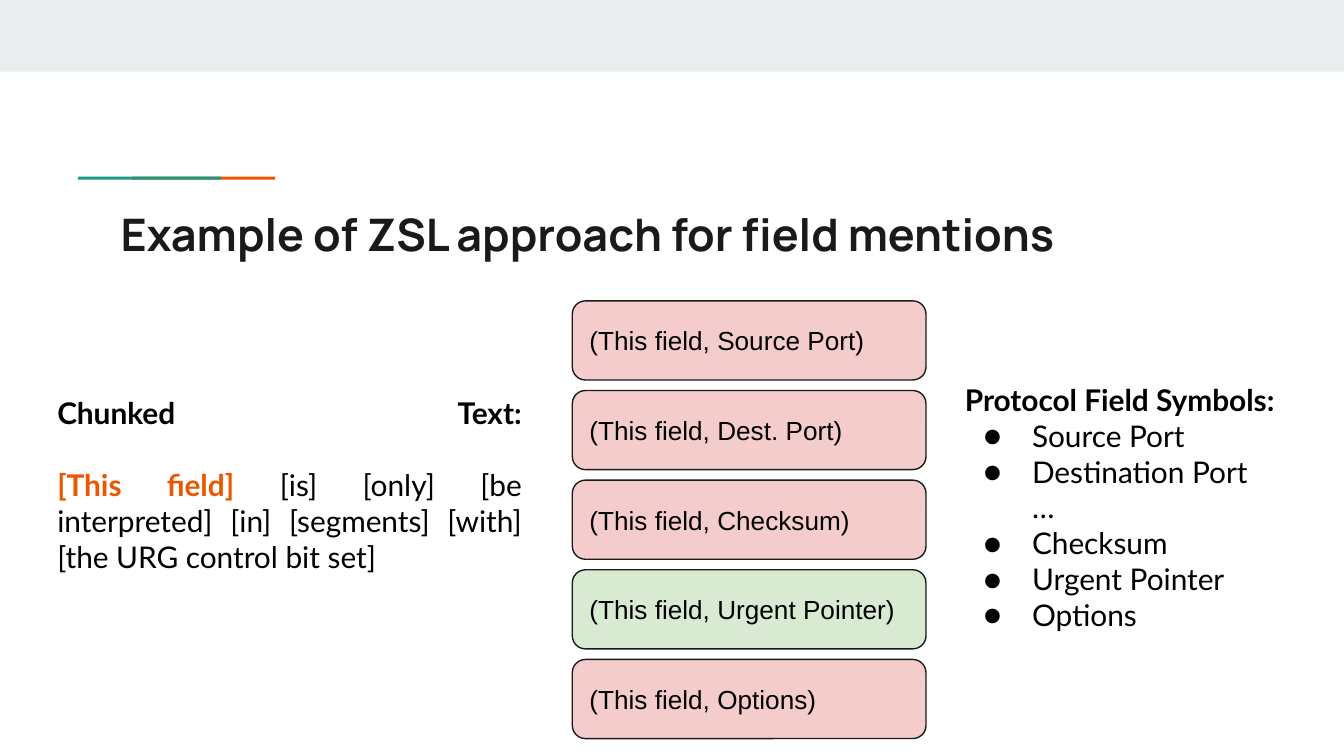
from dataclasses import dataclass

from lxml import etree
from pptx import Presentation
from pptx.dml import color
from pptx.enum import shapes, text
from pptx.oxml import ns
from pptx.util import Pt


@dataclass(frozen=True)
class Theme:
    """Colours, fonts and type sizes of the slide."""
    ink: str = "1A1A1A"
    black: str = "000000"
    band: str = "E9EDEE"
    teal: str = "1A9988"
    orange: str = "EB5600"
    miss: str = "F4CCCC"
    match: str = "D9EAD3"
    title_font: str = "Manrope"
    body_font: str = "Lato"
    pair_font: str = "Arial"
    title_size: float = 24
    body_size: float = 16
    pair_size: float = 14
    inset: float = 7.2


THEME = Theme()


def rgb(value):
    """Turn a hex string into a colour."""
    return color.RGBColor.from_string(value)


def add_run(paragraph, wording, font, size, ink=THEME.black, bold=False):
    """Add one styled run."""
    run = paragraph.add_run()
    run.text = wording
    run.font.name = font
    run.font.size = Pt(size)
    run.font.bold = bold
    run.font.color.rgb = rgb(ink)


def set_frame(frame, anchor=text.MSO_ANCHOR.TOP):
    """Set wrapping, anchor and even insets, and return the frame."""
    frame.word_wrap = True
    frame.vertical_anchor = anchor
    frame.margin_left = frame.margin_right = Pt(THEME.inset)
    frame.margin_top = frame.margin_bottom = Pt(THEME.inset)
    return frame


def add_text_frame(slide, box):
    """Add a text box and return its frame."""
    return set_frame(slide.shapes.add_textbox(*map(Pt, box)).text_frame)


def add_block(slide, kind, box, fill):
    """Add a flat filled shape without an outline."""
    block = slide.shapes.add_shape(kind, *map(Pt, box))
    block.shadow.inherit = False
    block.fill.solid()
    block.fill.fore_color.rgb = rgb(fill)
    block.line.fill.background()
    return block


def add_accent(slide, box):
    """Draw two overlapping bars, teal over orange."""
    left, top, width, height = box
    bar_width = 76.6
    for bar_left, fill in ((left + width - bar_width, THEME.orange), (left, THEME.teal)):
        add_block(slide, shapes.MSO_SHAPE.RECTANGLE, (bar_left, top, bar_width, height), fill)


def add_title(slide, box, wording):
    """Write the slide title."""
    paragraph = add_text_frame(slide, box).paragraphs[0]
    add_run(paragraph, wording, THEME.title_font, THEME.title_size, THEME.ink, True)


def add_chunked_text(slide, box, heading, mention, rest):
    """Write the justified sentence with its highlighted mention."""
    paragraph = add_text_frame(slide, box).paragraphs[0]
    paragraph.alignment = text.PP_ALIGN.JUSTIFY
    style = THEME.body_font, THEME.body_size
    add_run(paragraph, heading, *style, bold=True)
    for _ in range(2):
        paragraph.add_line_break()
        paragraph._p[-1].get_or_add_rPr().set("sz", str(THEME.body_size * 100))
        latin = etree.SubElement(paragraph._p[-1].rPr, ns.qn("a:latin"))
        latin.set("typeface", THEME.body_font)
    add_run(paragraph, mention, *style, ink=THEME.orange, bold=True)
    add_run(paragraph, rest, *style)


def set_indent(paragraph, bulleted):
    """Indent a paragraph and hang a bullet when asked."""
    properties = paragraph._p.get_or_add_pPr()
    properties.set("marL", str(Pt(36)))
    properties.set("indent", str(Pt(-26) if bulleted else 0))
    if bulleted:
        tint = etree.SubElement(properties, ns.qn("a:buClr"))
        etree.SubElement(tint, ns.qn("a:srgbClr")).set("val", THEME.black)
        etree.SubElement(properties, ns.qn("a:buFont")).set("typeface", THEME.body_font)
        etree.SubElement(properties, ns.qn("a:buChar")).set("char", "●")


def add_symbols(slide, box, heading, symbols):
    """Write the heading and the bulleted field symbols."""
    frame = add_text_frame(slide, box)
    style = THEME.body_font, THEME.body_size
    add_run(frame.paragraphs[0], heading, *style, bold=True)
    for symbol in symbols:
        paragraph = frame.add_paragraph()
        set_indent(paragraph, symbol != "…")
        add_run(paragraph, symbol, *style)


def add_pairs(slide, box, fields, matched):
    """Stack one rounded card per candidate pair, with the match in green."""
    left, top, width, height = box
    card_height = 42.4
    pitch = (height - card_height) / (len(fields) - 1)
    for row, field in enumerate(fields):
        fill = THEME.match if field == matched else THEME.miss
        card_box = left, top + row * pitch, width, card_height
        card = add_block(slide, shapes.MSO_SHAPE.ROUNDED_RECTANGLE, card_box, fill)
        card.line.color.rgb = rgb(THEME.ink)
        card.line.width = Pt(0.75)
        paragraph = set_frame(card.text_frame, text.MSO_ANCHOR.MIDDLE).paragraphs[0]
        paragraph.alignment = text.PP_ALIGN.LEFT
        add_run(paragraph, f"(This field, {field})", THEME.pair_font, THEME.pair_size)


def main():
    """Build and save the slide."""
    deck = Presentation()
    deck.slide_width, deck.slide_height = Pt(720), Pt(405)
    slide = deck.slides.add_slide(deck.slide_layouts[6])
    add_block(slide, shapes.MSO_SHAPE.RECTANGLE, (0, 0, 720, 38.4), THEME.band)
    add_accent(slide, (41.8, 94.7, 105.6, 1.6))
    add_title(slide, (57.6, 103.7, 605.5, 42.5), "Example of ZSL approach for field mentions")
    add_chunked_text(
        slide, (23.6, 204.5, 263.2, 67.7), "Chunked Text:", "[This field]",
        " [is] [only] [be interpreted] [in] [segments] [with] [the URG control bit set]")
    add_symbols(
        slide, (509.8, 197.3, 204, 67.7), "Protocol Field Symbols:",
        ("Source Port", "Destination Port", "…", "Checksum", "Urgent Pointer", "Options"))
    add_pairs(
        slide, (306.6, 161.2, 189.5, 234.5),
        ("Source Port", "Dest. Port", "Checksum", "Urgent Pointer", "Options"),
        matched="Urgent Pointer")
    deck.save("out.pptx")


if __name__ == "__main__":
    main()
